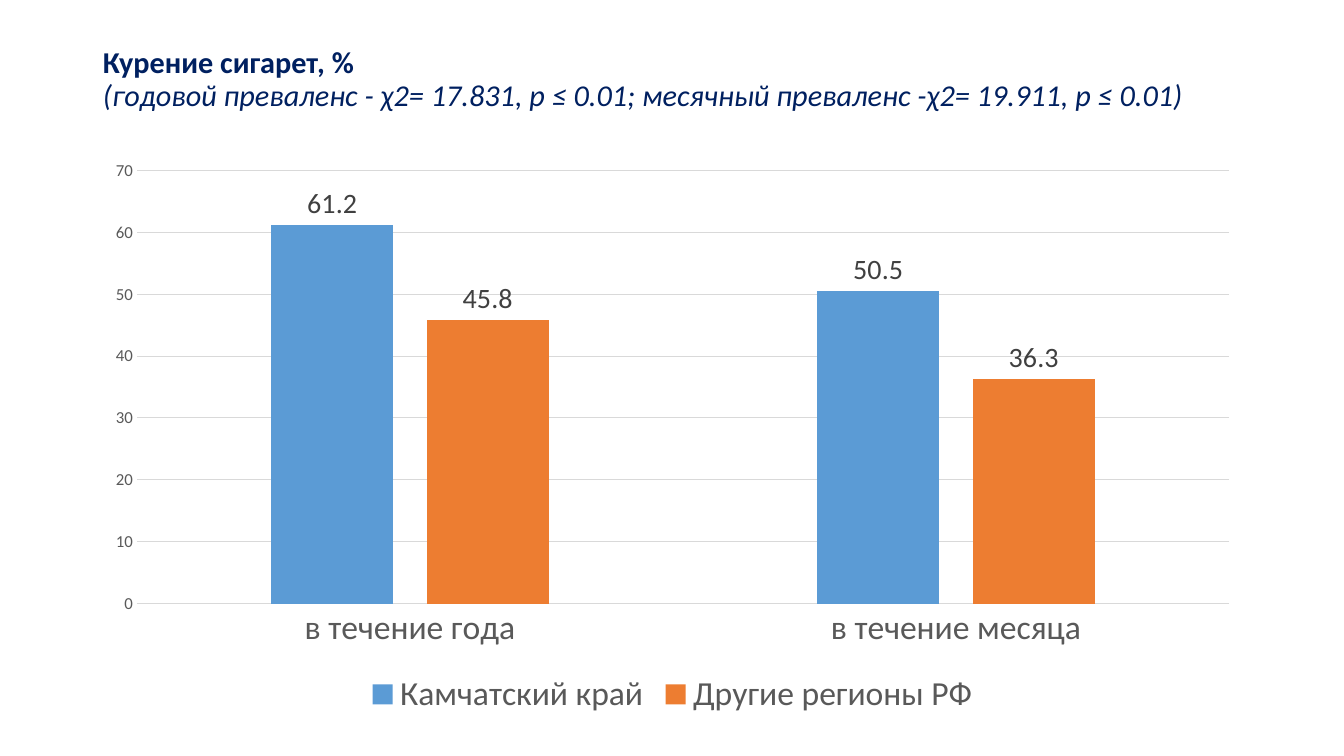
"""Build a slide comparing cigarette smoking prevalence in two regions."""
from pptx import Presentation
from pptx.chart.data import CategoryChartData
from pptx.dml.color import RGBColor
from pptx.enum.chart import XL_CHART_TYPE, XL_LABEL_POSITION, XL_LEGEND_POSITION, XL_TICK_MARK
from pptx.enum.text import MSO_ANCHOR, MSO_AUTO_SIZE, PP_ALIGN
from pptx.util import Inches, Pt

TITLE = [
    ("Курение сигарет, %", {"bold": True, "italic": False}),
    ("(годовой преваленс - χ2= 17.831, p ≤ 0.01; месячный преваленс -χ2= 19.911, p ≤ 0.01)",
     {"bold": False, "italic": True}),
]
PERIODS = ["в течение года", "в течение месяца"]
SMOKERS = {"Камчатский край": (61.2, 50.5), "Другие регионы РФ": (45.8, 36.3)}
TITLE_BOX = (0.92, 0.4, 11.88, 0.79)
CHART_BOX = (0.92, 1.48, 11.5, 5.68)
THEME = {
    "font": "Calibri",
    "colors": {"title": "002060", "axis": "595959", "label": "404040", "grid": "D9D9D9"},
    "series": ["5B9BD5", "ED7D31"],
    "sizes": {"title": 21.6, "category": 24, "value": 12, "legend": 24, "label": 20},
}


def set_font(font, size, color, **extra):
    values = {"name": THEME["font"], "size": Pt(THEME["sizes"][size]), **extra}
    for key, value in values.items():
        setattr(font, key, value)
    font.color.rgb = RGBColor.from_string(THEME["colors"][color])


def set_line(line):
    line.width = Pt(0.75)
    line.color.rgb = RGBColor.from_string(THEME["colors"]["grid"])


def add_title(s):
    title = s.shapes.title
    title.left, title.top, title.width, title.height = map(Inches, TITLE_BOX)
    tf = title.text_frame
    for key, value in {"word_wrap": True, "auto_size": MSO_AUTO_SIZE.NONE,
                       "vertical_anchor": MSO_ANCHOR.MIDDLE}.items():
        setattr(tf, key, value)
    p = tf.paragraphs[0]
    p.alignment, p.line_spacing = PP_ALIGN.LEFT, 0.9
    for i, (text, style) in enumerate(TITLE):
        if i:
            p.add_line_break()
        r = p.add_run()
        r.text = text
        set_font(r.font, "title", "title", **style)


def add_smoking_chart(s):
    data = CategoryChartData(number_format="General")
    data.categories = PERIODS
    for name, values in SMOKERS.items():
        data.add_series(name, values)
    chart = s.shapes.add_chart(
        XL_CHART_TYPE.COLUMN_CLUSTERED, *map(Inches, CHART_BOX), data).chart
    chart.has_title = False
    chart.font.name, chart.font.size = THEME["font"], Pt(10)

    chart.has_legend = True
    chart.legend.position = XL_LEGEND_POSITION.BOTTOM
    chart.legend.include_in_layout = False
    set_font(chart.legend.font, "legend", "axis")

    for axis, size in ((chart.category_axis, "category"), (chart.value_axis, "value")):
        axis.major_tick_mark = axis.minor_tick_mark = XL_TICK_MARK.NONE
        set_font(axis.tick_labels.font, size, "axis")
    set_line(chart.category_axis.format.line)
    axis = chart.value_axis
    axis.minimum_scale, axis.maximum_scale, axis.major_unit = 0, 70, 10
    axis.format.line.fill.background()
    set_line(axis.major_gridlines.format.line)

    plot = chart.plots[0]
    plot.gap_width, plot.overlap, plot.vary_by_categories = 219, -27, False
    for series, color in zip(plot.series, THEME["series"]):
        series.format.fill.solid()
        series.format.fill.fore_color.rgb = RGBColor.from_string(color)
        labels = series.data_labels
        labels.show_value = True
        labels.position = XL_LABEL_POSITION.OUTSIDE_END
        set_font(labels.font, "label", "label")


def main():
    prs = Presentation()
    prs.slide_width, prs.slide_height = Inches(13.33), Inches(7.5)
    s = prs.slides.add_slide(prs.slide_layouts[5])
    add_title(s)
    add_smoking_chart(s)
    prs.save("out.pptx")


if __name__ == "__main__":
    main()
